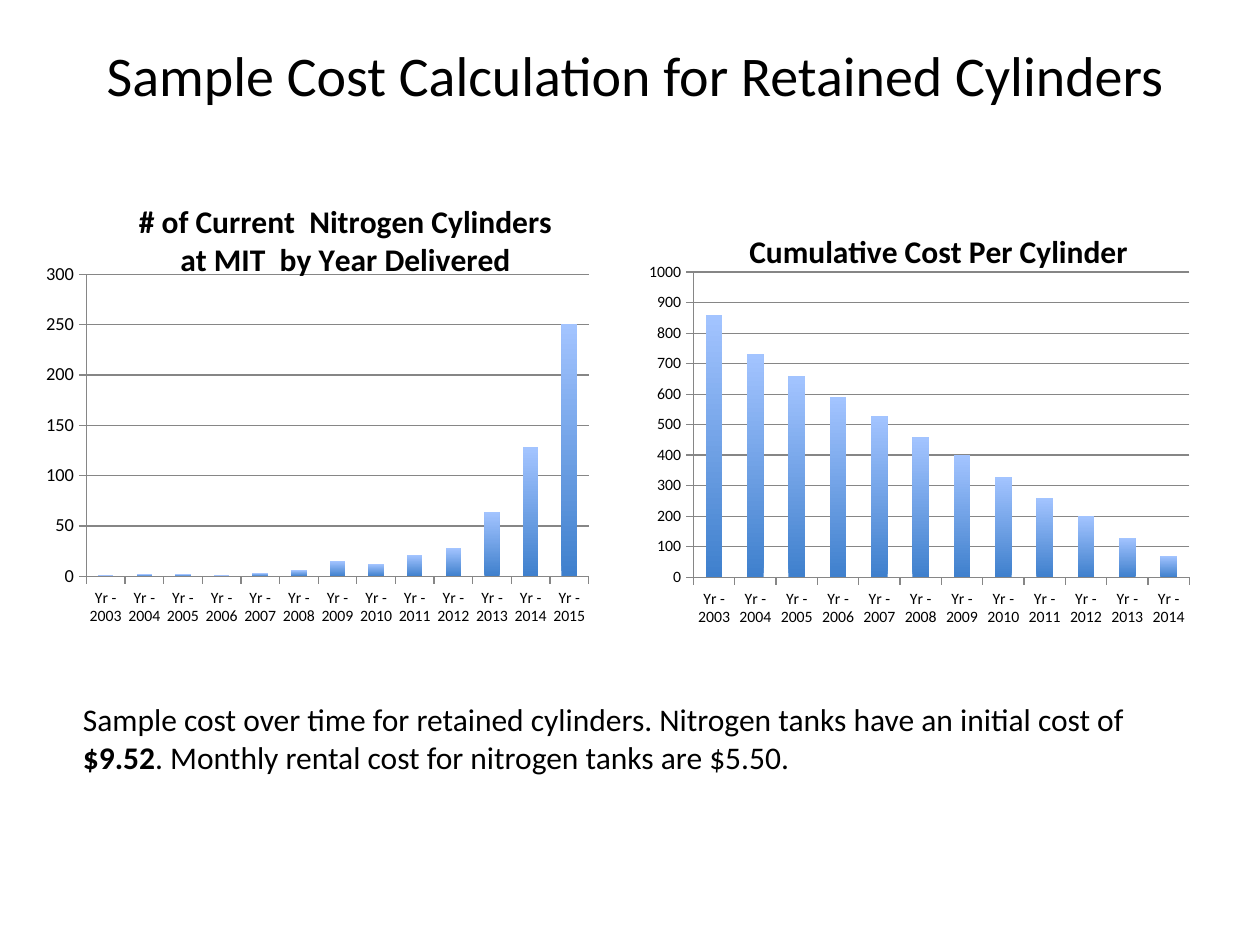
from lxml import etree
from pptx import Presentation
from pptx.chart.data import CategoryChartData
from pptx.dml.color import RGBColor
from pptx.enum import chart as ch, text as tx
from pptx.oxml.ns import qn
from pptx.util import Inches, Pt

COLORS = {"text": "000000", "grid": "868686", "bar_top": "A3C4FF", "bar_bottom": "3F80CD"}
FONT = "Calibri"

CHARTS = [
    {
        "box": (0.3, 1.51, 4.54, 3.48),
        "title": "# of Current  Nitrogen Cylinders\nat MIT  by Year Delivered",
        "title_at": (0.17, 0.015),
        "plot": (0.085, 0.192, 0.878, 0.689),
        "value_size": 10.5,
        "max": 300,
        "step": 50,
        "values": [1, 2, 2, 1, 3, 6, 15, 12, 21, 28, 64, 128, 251],
    },
    {
        "box": (5.05, 1.6, 4.73, 3.48),
        "title": "Cumulative Cost Per Cylinder",
        "title_at": (0.18, 0.05),
        "plot": (0.096, 0.161, 0.832, 0.696),
        "value_size": 9,
        "max": 1000,
        "step": 100,
        "values": [860, 730, 660, 590, 530, 460, 400, 330, 260, 200, 130, 70],
    },
]


def rgb(name):
    return RGBColor.from_string(COLORS[name])


def style_font(font, size, bold=False):
    for key, value in {"name": FONT, "size": Pt(size), "bold": bold}.items():
        setattr(font, key, value)
    font.color.rgb = rgb("text")


def set_layout(parent, position, inner=False):
    """Place a chart part by fractions of the chart: x, y and optionally w, h."""
    layout = parent.find(qn("c:layout"))
    if layout is None:
        layout = etree.Element(qn("c:layout"))
        before = parent.find(qn("c:tx"))
        if before is None:
            parent.insert(0, layout)
        else:
            before.addnext(layout)
    manual = etree.SubElement(layout, qn("c:manualLayout"))
    settings = [("layoutTarget", "inner")] if inner else []
    settings += [("xMode", "edge"), ("yMode", "edge")]
    settings += zip("xywh", position)
    for tag, value in settings:
        etree.SubElement(manual, qn(f"c:{tag}")).set("val", str(value))


def style_axis(axis, size):
    axis.major_tick_mark = ch.XL_TICK_MARK.OUTSIDE
    axis.minor_tick_mark = ch.XL_TICK_MARK.NONE
    style_font(axis.tick_labels.font, size)
    axis.format.line.color.rgb = rgb("grid")
    axis.format.line.width = Pt(0.75)


def add_column_chart(slide, info):
    data = CategoryChartData()
    data.categories = [f"Yr - {2003 + i}" for i in range(len(info["values"]))]
    data.add_series("Series 1", info["values"])
    box = [Inches(length) for length in info["box"]]
    chart = slide.shapes.add_chart(ch.XL_CHART_TYPE.COLUMN_CLUSTERED, *box, data).chart
    style_font(chart.font, info["value_size"])
    chart.has_legend = False

    title = chart.chart_title
    title.text_frame.text = info["title"]
    for paragraph in title.text_frame.paragraphs:
        style_font(paragraph.font, 18, bold=True)
        for run in paragraph.runs:
            style_font(run.font, 18, bold=True)
    set_layout(title._element, info["title_at"])
    title.include_in_layout = False

    plot = chart.plots[0]
    plot.gap_width = 150
    plot.vary_by_categories = False
    set_layout(chart._chartSpace.chart.plotArea, info["plot"], inner=True)

    style_axis(chart.category_axis, 9)
    values = chart.value_axis
    style_axis(values, info["value_size"])
    scale = {"minimum_scale": 0, "maximum_scale": info["max"], "major_unit": info["step"]}
    for key, value in scale.items():
        setattr(values, key, value)
    values.major_gridlines.format.line.color.rgb = rgb("grid")
    values.major_gridlines.format.line.width = Pt(0.75)

    fill = plot.series[0].format.fill
    fill.gradient()
    fill.gradient_angle = 90
    for stop, name in zip(fill.gradient_stops, ("bar_bottom", "bar_top")):
        stop.color.rgb = rgb(name)


def write_text(shape, box, runs, size, wrap, align):
    """Place a shape and fill it with one paragraph of (text, bold) runs."""
    for key, length in zip(("left", "top", "width", "height"), box):
        setattr(shape, key, Inches(length))
    frame = shape.text_frame
    frame.word_wrap = wrap
    frame.auto_size = tx.MSO_AUTO_SIZE.SHAPE_TO_FIT_TEXT
    frame.vertical_anchor = tx.MSO_ANCHOR.TOP
    paragraph = frame.paragraphs[0]
    paragraph.alignment = align
    for words, bold in runs:
        run = paragraph.add_run()
        run.text = words
        style_font(run.font, size, bold)


def main():
    deck = Presentation()
    deck.slide_width, deck.slide_height = Inches(10), Inches(7.5)
    slide = deck.slides.add_slide(deck.slide_layouts[5])

    heading = [("Sample Cost Calculation for Retained Cylinders", False)]
    write_text(slide.shapes.title, (0.69, 0.27, 8.71, 0.64), heading, 32,
               False, tx.PP_ALIGN.CENTER)
    for info in CHARTS:
        add_column_chart(slide, info)

    note_box = (0.56, 5.51, 9.1, 0.71)
    note = [
        ("Sample cost over time for retained cylinders. "
         "Nitrogen tanks have an initial cost of ", False),
        ("$9.52", True),
        (". Monthly rental cost for nitrogen tanks are $5.50.", False),
    ]
    note_shape = slide.shapes.add_textbox(*[Inches(length) for length in note_box])
    write_text(note_shape, note_box, note, 18, True, tx.PP_ALIGN.LEFT)

    deck.save("out.pptx")


if __name__ == "__main__":
    main()
